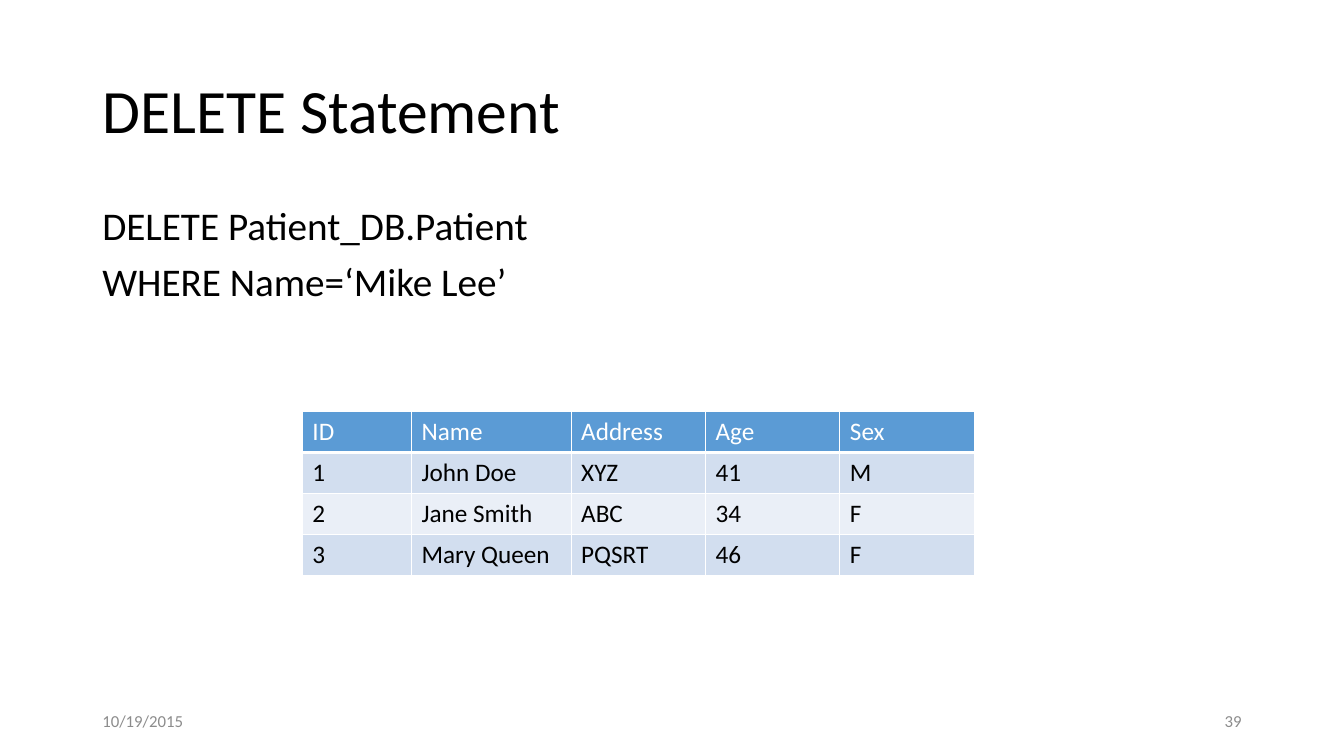
from lxml.etree import SubElement
from pptx import Presentation
from pptx.dml.color import RGBColor
from pptx.enum.text import MSO_ANCHOR, PP_ALIGN
from pptx.oxml.ns import qn
from pptx.util import Pt


def color(hex_value):
    return RGBColor.from_string(hex_value)


def write(frame, text, size=18, ink="000000", align=PP_ALIGN.LEFT,
          anchor=MSO_ANCHOR.TOP, line_spacing=1.0, space_before=0):
    frame.word_wrap = True
    frame.vertical_anchor = anchor
    frame.text = text
    for paragraph in frame.paragraphs:
        paragraph.alignment = align
        paragraph.line_spacing = line_spacing
        paragraph.space_before = Pt(space_before)
        font = paragraph.runs[0].font
        font.name, font.size, font.bold = "Calibri", Pt(size), False
        font.color.rgb = color(ink)


presentation = Presentation()
presentation.slide_width, presentation.slide_height = Pt(960), Pt(540)
slide = presentation.slides.add_slide(presentation.slide_layouts[6])

# Title, statement, date and slide number
middle = MSO_ANCHOR.MIDDLE
footer = {"size": 12, "ink": "8C8C8C", "anchor": middle}
text_boxes = [
    ((66, 28.75, 828, 104.4), "DELETE Statement",
     {"size": 44, "anchor": middle, "line_spacing": 0.9}),
    ((66, 143.75, 828, 342.6), "DELETE Patient_DB.Patient\nWHERE Name=‘Mike Lee’",
     {"size": 28, "line_spacing": 0.9, "space_before": 10}),
    ((66, 500.5, 216, 28.75), "10/19/2015", footer),
    ((678, 500.5, 216, 28.75), "39", {**footer, "align": PP_ALIGN.RIGHT}),
]
for box, text, style in text_boxes:
    shape = slide.shapes.add_textbox(*map(Pt, box))
    write(shape.text_frame, text, **style)

# Patient table
patients = [
    ["ID", "Name", "Address", "Age", "Sex"],
    ["1", "John Doe", "XYZ", "41", "M"],
    ["2", "Jane Smith", "ABC", "34", "F"],
    ["3", "Mary Queen", "PQSRT", "46", "F"],
]
column_widths = [78, 114, 96, 96, 96]
row_height = 29.2
table = slide.shapes.add_table(
    len(patients), len(column_widths), Pt(216), Pt(294),
    Pt(sum(column_widths)), Pt(row_height * len(patients))).table
for column, width in zip(table.columns, column_widths):
    column.width = Pt(width)

row_fills = ["5B9BD5", "D2DEEF", "EAEFF7", "D2DEEF"]
for row_index, (values, row_fill) in enumerate(zip(patients, row_fills)):
    table.rows[row_index].height = Pt(row_height)
    is_header = row_index == 0
    for column_index, value in enumerate(values):
        cell = table.cell(row_index, column_index)
        write(cell.text_frame, value, ink="FFFFFF" if is_header else "000000")

        # White borders, heavier below the header
        properties = cell._tc.get_or_add_tcPr()
        for side in ("lnL", "lnR", "lnT", "lnB"):
            below_header = (row_index, side) in ((0, "lnB"), (1, "lnT"))
            line = SubElement(properties, qn(f"a:{side}"),
                              w=str(Pt(3 if below_header else 1)))
            line_fill = SubElement(line, qn("a:solidFill"))
            SubElement(line_fill, qn("a:srgbClr"), val="FFFFFF")

        cell.fill.solid()
        cell.fill.fore_color.rgb = color(row_fill)

presentation.save("out.pptx")
